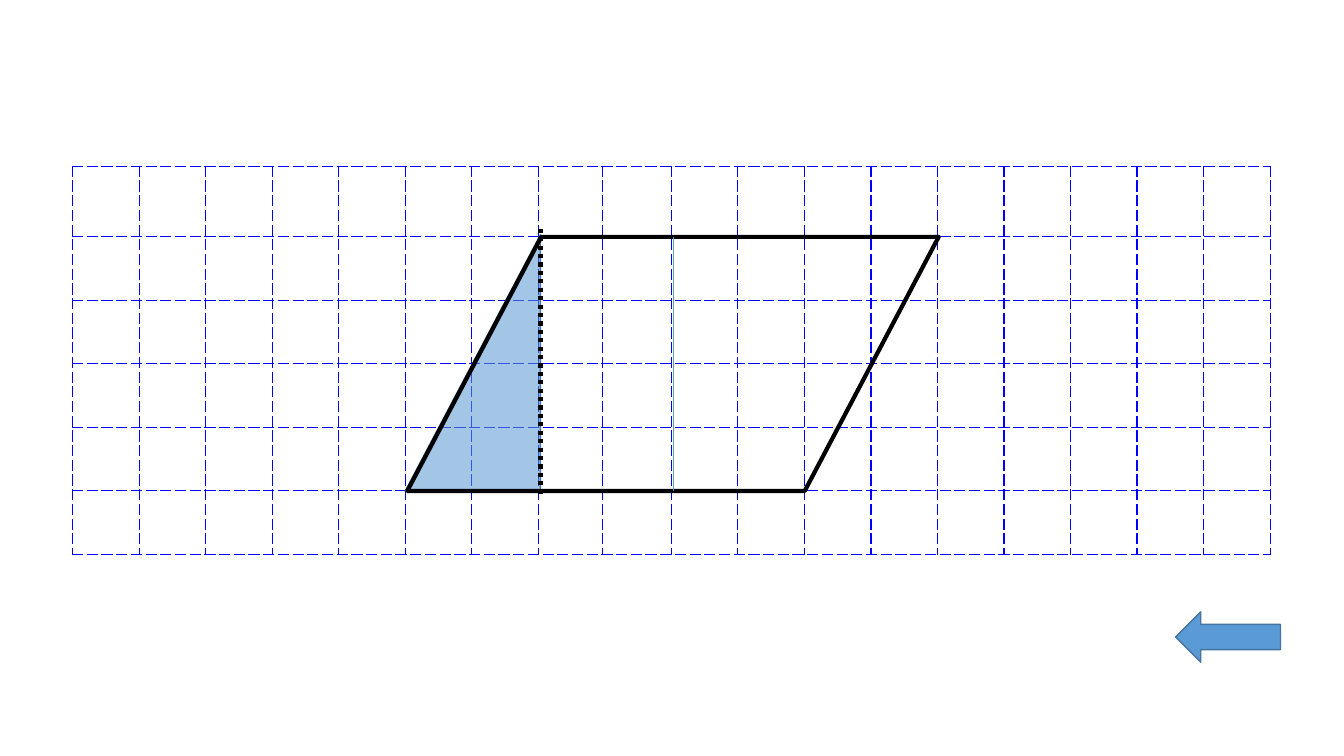
from lxml import etree
from pptx import Presentation
from pptx.dml.color import RGBColor
from pptx.enum import dml, shapes
from pptx.oxml import ns
from pptx.util import Inches, Pt

COLORS = {"grid": "0000FF", "blue": "5B9BD5", "edge": "43739E", "outline": "000000"}
ROWS, COLUMNS = 6, 18


def style_line(shape, color, width):
    shape.line.color.rgb = RGBColor.from_string(COLORS[color])
    shape.line.width = Pt(width)


def add_figure(kind, left, top, width, height, line_color, line_width, fill=None):
    shape = slide.shapes.add_shape(
        kind, Inches(left), Inches(top), Inches(width), Inches(height))
    shape.shadow.inherit = False
    style_line(shape, line_color, line_width)
    if fill:
        shape.fill.solid()
        shape.fill.fore_color.rgb = RGBColor.from_string(COLORS[fill])
    else:
        shape.fill.background()
    return shape


presentation = Presentation()
presentation.slide_width = Inches(13.33)
presentation.slide_height = Inches(7.5)
slide = presentation.slides.add_slide(presentation.slide_layouts[6])

grid = slide.shapes.add_table(
    ROWS, COLUMNS, Inches(0.72), Inches(1.65), Inches(11.89), Inches(3.84)).table
grid.first_row = False
grid.horz_banding = False
for column in grid.columns:
    column.width = Inches(0.66)
grid.columns[7].width = Inches(0.64)
grid.columns[8].width = Inches(0.68)
for row in grid.rows:
    row.height = Inches(0.63)
grid.rows[0].height = Inches(0.7)

for cell in grid.iter_cells():
    cell.fill.background()
    properties = cell._tc.get_or_add_tcPr()
    for position, side in enumerate(("lnL", "lnR", "lnT", "lnB")):
        border = etree.Element(ns.qn(f"a:{side}"), w=str(Pt(1)))
        fill = etree.SubElement(border, ns.qn("a:solidFill"))
        etree.SubElement(fill, ns.qn("a:srgbClr"), val=COLORS["grid"])
        etree.SubElement(border, ns.qn("a:prstDash"), val="lgDash")
        properties.insert(position, border)

triangle = add_figure(shapes.MSO_SHAPE.RIGHT_TRIANGLE,
                      3.42, 2.93, 2.54, 1.34, "edge", 1, "blue")
triangle.rotation = 270
triangle_color = triangle.fill._xPr.find(".//" + ns.qn("a:srgbClr"))
etree.SubElement(triangle_color, ns.qn("a:alpha"), val="56000")

parallelogram = add_figure(shapes.MSO_SHAPE.PARALLELOGRAM,
                           4.04, 2.35, 5.27, 2.52, "outline", 3)
parallelogram.adjustments[0] = 0.527

for x, top, bottom, color, width, dash in (
    (6.68, 2.35, 4.87, "blue", 0.5, None),
    (5.36, 2.27, 4.92, "outline", 3, dml.MSO_LINE.ROUND_DOT),
):
    height_line = slide.shapes.add_connector(
        shapes.MSO_CONNECTOR.STRAIGHT, Inches(x), Inches(top), Inches(x), Inches(bottom))
    style_line(height_line, color, width)
    height_line.line.dash_style = dash
    etree.SubElement(height_line._element.spPr, ns.qn("a:effectLst"))

add_figure(shapes.MSO_SHAPE.LEFT_ARROW, 11.66, 6.07, 1.04, 0.5, "edge", 1, "blue")

presentation.save("out.pptx")
